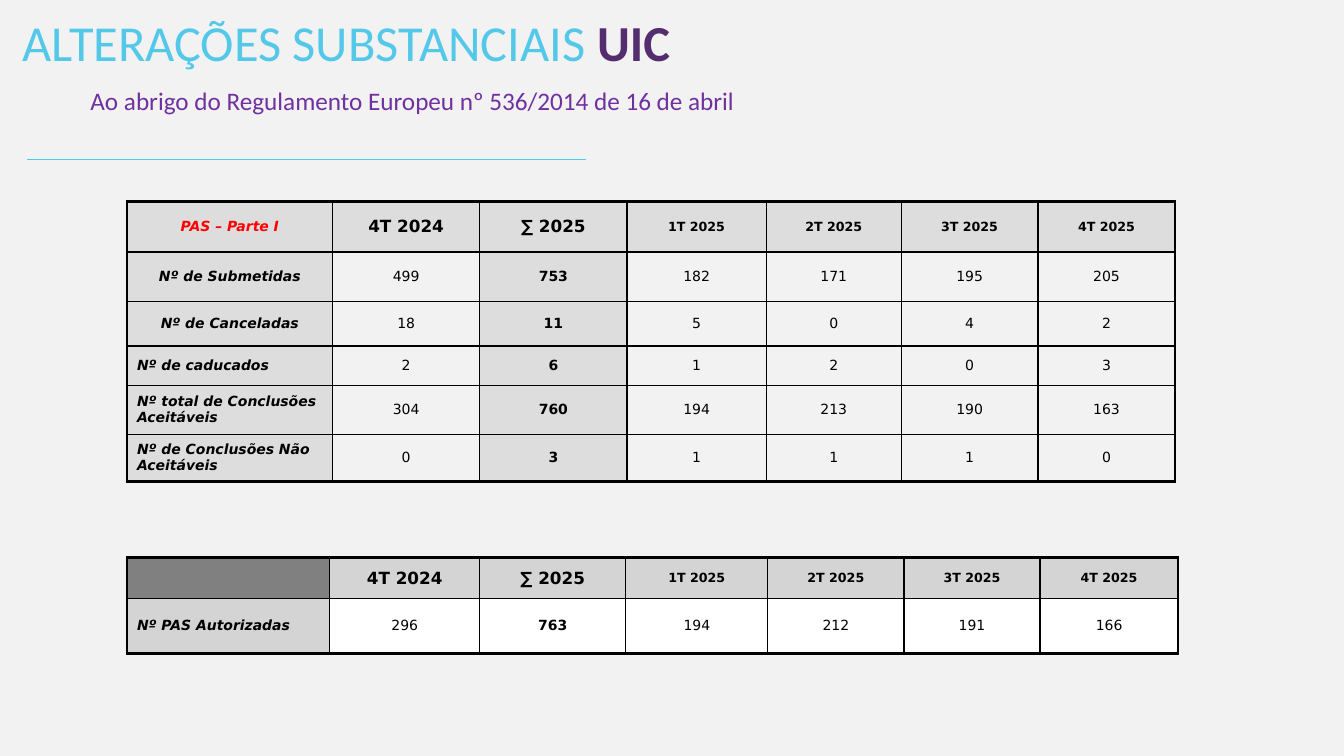
from dataclasses import dataclass

from lxml import etree
from pptx import Presentation
from pptx import util as u
from pptx.dml.color import RGBColor
from pptx.enum import shapes, text
from pptx.oxml import ns

HEADINGS = ["", "4T 2024", "∑ 2025", "1T 2025", "2T 2025", "3T 2025", "4T 2025"]
TOTAL_COLUMN = 2
THIN, THICK = 1, 2.25


@dataclass
class Span:
    words: str
    size: float
    color: str = "000000"
    bold: bool = False
    italic: bool = False
    name: str = "DejaVu Sans"


@dataclass
class TextBox:
    left: float
    top: float
    width: float
    height: float
    spans: list[Span]
    inset_left: float = 0.25
    inset_top: float = 0.13


@dataclass
class Grid:
    left: float
    top: float
    widths: list[float]
    heights: list[float]
    title: str
    rows: list[list[str]]
    shade: str
    corner: str
    body: str | None  # None leaves the page visible
    total: str
    centred_labels: int = 0


TEXT_BOXES = [
    TextBox(0, -0.36, 22.86, 2.31, [
        Span("ALTERAÇÕES SUBSTANCIAIS ", 36, "53C8E9", name="Calibri"),
        Span("UIC", 36, "532D6D", bold=True, name="Calibri"),
    ], inset_left=0.57, inset_top=0.62),
    TextBox(2.03, 1.91, 20.02, 1.24, [
        Span("Ao abrigo do Regulamento Europeu nº 536/2014 de 16 de abril",
             18, "7030A0", name="Calibri"),
    ]),
]

GRIDS = [
    Grid(3.2, 5.08, [5.18, 3.71, 3.71, 3.51, 3.4, 3.45, 3.45],
         [1.27, 1.25, 1.12, 1, 1.22, 1.19], "PAS – Parte I", [
             ["Nº de Submetidas", "499", "753", "182", "171", "195", "205"],
             ["Nº de Canceladas", "18", "11", "5", "0", "4", "2"],
             ["Nº de caducados", "2", "6", "1", "2", "0", "3"],
             ["Nº total de Conclusões Aceitáveis",
              "304", "760", "194", "213", "190", "163"],
             ["Nº de Conclusões Não Aceitáveis", "0", "3", "1", "1", "1", "0"],
         ], shade="DDDDDD", corner="DDDDDD", body=None, total="DDDDDD", centred_labels=2),
    Grid(3.2, 14.05, [5.11, 3.78, 3.68, 3.58, 3.43, 3.43, 3.48], [1.04, 1.37], "",
         [["Nº PAS Autorizadas", "296", "763", "194", "212", "191", "166"]],
         shade="D4D4D4", corner="808080", body="FFFFFF", total="FFFFFF"),
]


def rgb(color: str) -> RGBColor:
    return RGBColor.from_string(color)


def add_span(para, span: Span) -> None:
    run = para.add_run()
    run.text = span.words
    formats = {"size": u.Pt(span.size), "bold": span.bold,
               "italic": span.italic, "name": span.name}
    for key, value in formats.items():
        setattr(run.font, key, value)
    run.font.color.rgb = rgb(span.color)


def add_text(page, item: TextBox) -> None:
    box = page.shapes.add_textbox(
        *map(u.Cm, (item.left, item.top, item.width, item.height)))
    formats = {"word_wrap": True, "vertical_anchor": text.MSO_ANCHOR.MIDDLE,
               "margin_left": u.Cm(item.inset_left), "margin_top": u.Cm(item.inset_top)}
    for key, value in formats.items():
        setattr(box.text_frame, key, value)
    for span in item.spans:
        add_span(box.text_frame.paragraphs[0], span)


def add_rule(page) -> None:
    rule = page.shapes.add_connector(
        shapes.MSO_CONNECTOR.STRAIGHT, *map(u.Cm, (14.78, 4.01, 0.69, 4.01)))
    rule.line.color.rgb = rgb("53C8E9")
    rule.line.width = u.Pt(0.5)
    etree.SubElement(rule._element.spPr, ns.qn("a:effectLst"))


def add_borders(cell, outer: dict[str, bool]) -> None:
    properties = cell._tc.get_or_add_tcPr()
    for side, is_outer in outer.items():
        width = u.Pt(THICK if is_outer else THIN)
        border = etree.SubElement(properties, ns.qn(f"a:ln{side}"), w=str(int(width)))
        fill = etree.SubElement(border, ns.qn("a:solidFill"))
        etree.SubElement(fill, ns.qn("a:srgbClr"), val="000000")


def cell_span(words: str, row: int, column: int) -> Span:
    if column == 0:
        color = "FF0000" if row == 0 else "000000"
        return Span(words, 10, color, bold=True, italic=True)
    if row == 0:
        return Span(words, 12 if column <= TOTAL_COLUMN else 9, bold=True)
    return Span(words, 10, bold=column == TOTAL_COLUMN)


def cell_fill(grid: Grid, row: int, column: int) -> str | None:
    if row == 0 and column == 0:
        return grid.corner
    if row == 0 or column == 0:
        return grid.shade
    return grid.total if column == TOTAL_COLUMN else grid.body


def add_grid(page, grid: Grid) -> None:
    values = [[grid.title, *HEADINGS[1:]], *grid.rows]
    last_row, last_column = len(values) - 1, len(HEADINGS) - 1
    frame = page.shapes.add_table(
        len(values), len(HEADINGS),
        *map(u.Cm, (grid.left, grid.top, sum(grid.widths), sum(grid.heights))))
    table = frame.table
    table.first_row = table.horz_banding = False
    for column, width in zip(table.columns, grid.widths):
        column.width = u.Cm(width)
    for row, height in zip(table.rows, grid.heights):
        row.height = u.Cm(height)

    for r, words_in_row in enumerate(values):
        for c, words in enumerate(words_in_row):
            cell = table.cell(r, c)
            add_borders(cell, {"L": c == 0, "R": c == last_column,
                               "T": r == 0, "B": r == last_row})
            fill = cell_fill(grid, r, c)
            if fill:
                cell.fill.solid()
                cell.fill.fore_color.rgb = rgb(fill)
            else:
                cell.fill.background()
            cell.vertical_anchor = text.MSO_ANCHOR.MIDDLE
            para = cell.text_frame.paragraphs[0]
            centred = c > 0 or r <= grid.centred_labels
            para.alignment = text.PP_ALIGN.CENTER if centred else text.PP_ALIGN.LEFT
            if words:
                add_span(para, cell_span(words, r, c))


def main() -> None:
    deck = Presentation()
    deck.slide_width, deck.slide_height = u.Cm(33.87), u.Cm(19.05)
    page = deck.slides.add_slide(deck.slide_layouts[6])
    page.background.fill.solid()
    page.background.fill.fore_color.rgb = rgb("F2F2F2")

    # Heading
    add_rule(page)
    for item in TEXT_BOXES:
        add_text(page, item)

    # Quarterly figures
    for grid in GRIDS:
        add_grid(page, grid)

    deck.save("out.pptx")


if __name__ == "__main__":
    main()
